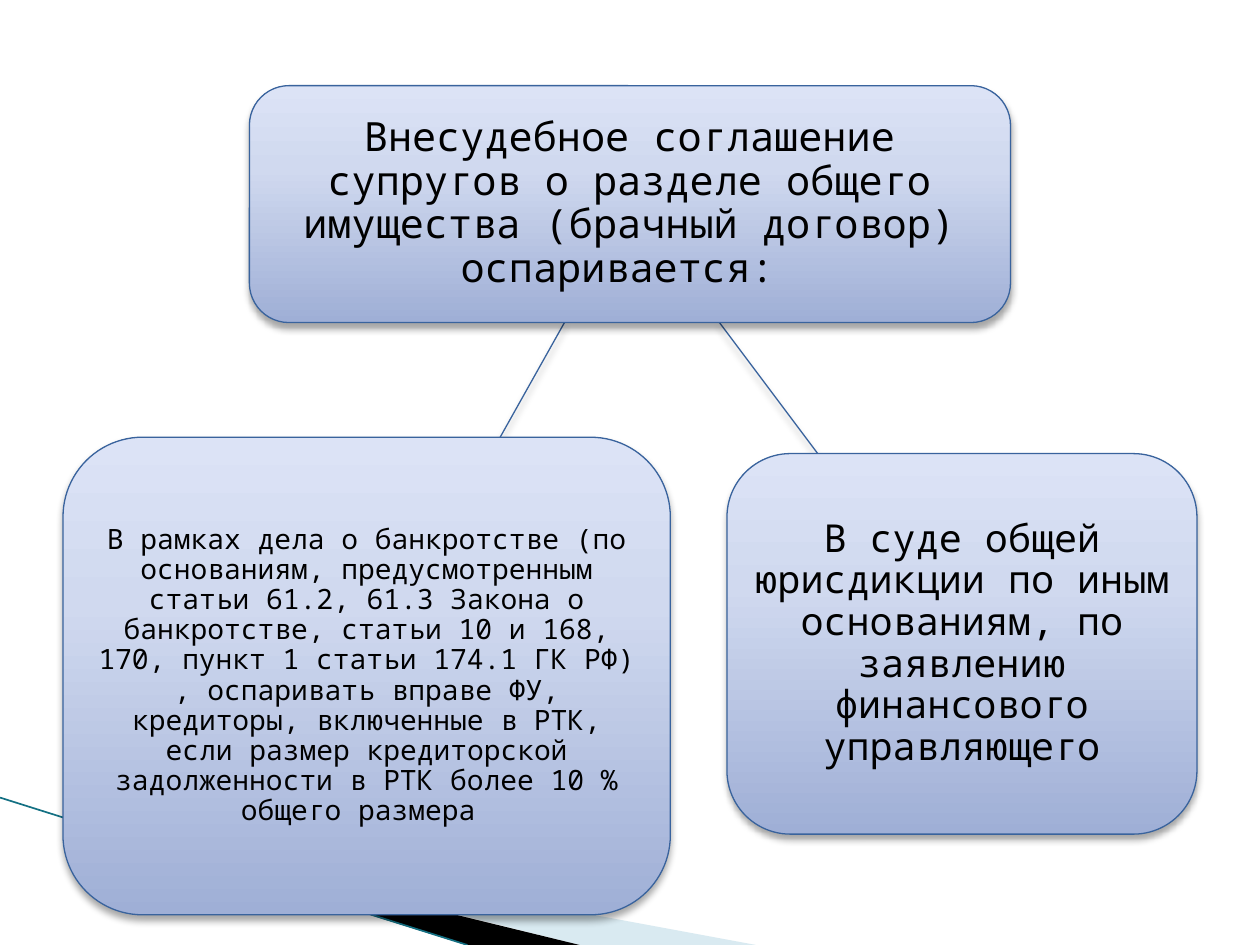
from copy import deepcopy
from dataclasses import dataclass

from lxml.etree import SubElement
from pptx import Presentation
from pptx.dml.color import RGBColor
from pptx.enum.shapes import MSO_CONNECTOR, MSO_SHAPE
from pptx.enum.text import MSO_ANCHOR, PP_ALIGN
from pptx.oxml.ns import qn
from pptx.util import Inches, Pt

CELL = 0.1
GRADIENT = ((0, "9FAFD6"), (0.65, "D0D9EF"), (1, "DCE3F6"))
OUTLINE = "39639D"
BLACK = "000000"


@dataclass
class Box:
    column: float
    row: float
    columns: float
    rows: float
    inset: float
    size: int
    text: str


@dataclass
class Link:
    start: tuple[float, float]
    end: tuple[float, float]
    color: str = OUTLINE
    width: float = 0.75
    shadow: bool = True


@dataclass
class Wedge:
    points: list[tuple[float, float]]
    color: str
    opacity: int


WEDGES = [
    Wedge([(5.5, 65), (59.5, 75), (45.6, 75)], "A0CBDC", 40),
    Wedge([(5.3, 64.9), (45.7, 75), (37.2, 75)], BLACK, 100),
]
EDGE = Link((0, 63.3), (37.1, 75), "137083", 0.95, False)
LINKS = [Link((44.8, 25.6), (39.7, 34.7)), Link((57.1, 25.6), (64.9, 36))]
BOXES = [
    Box(19.8, 6.8, 60.4, 18.8, 0.6, 23,
        "Внесудебное соглашение супругов о разделе общего имущества "
        "(брачный договор) оспаривается: "),
    Box(5, 34.7, 48.2, 37.9, 0.4, 16,
        "В рамках дела о банкротстве (по основаниям, предусмотренным статьи "
        "61.2, 61.3 Закона о банкротстве, статьи 10 и 168, 170, пункт 1 статьи "
        "174.1 ГК РФ) , оспаривать вправе ФУ, кредиторы, включенные в РТК, если "
        "размер кредиторской задолженности в РТК более 10 % общего размера "),
    Box(57.7, 36, 37.3, 30.2, 0.6, 22,
        "В суде общей юрисдикции по иным основаниям, по заявлению "
        "финансового управляющего"),
]


def cells(count: float) -> int:
    return Inches(count * CELL)


def color(value: str) -> RGBColor:
    return RGBColor.from_string(value)


def set_attributes(target, values: dict) -> None:
    for name, value in values.items():
        setattr(target, name, value)


def set_line(line, value: str, width: float) -> None:
    line.color.rgb = color(value)
    line.width = Pt(width)


def add_shadow(effects) -> None:
    shadow = SubElement(effects, qn("a:outerShdw"), blurRad=str(Pt(4)),
                        dist=str(Pt(3)), dir="5400000", rotWithShape="0")
    black = SubElement(shadow, qn("a:srgbClr"), val=BLACK)
    SubElement(black, qn("a:alpha"), val="35000")


def draw_wedge(slide, wedge: Wedge) -> None:
    first, *rest = wedge.points
    builder = slide.shapes.build_freeform(*first, scale=cells(1))
    builder.add_line_segments(rest)
    shape = builder.convert_to_shape()
    shape.shadow.inherit = False
    shape.line.fill.background()
    shape.fill.solid()
    shape.fill.fore_color.rgb = color(wedge.color)
    if wedge.opacity < 100:
        fill_color = next(shape.element.spPr.iter(qn("a:srgbClr")))
        SubElement(fill_color, qn("a:alpha"), val=str(wedge.opacity * 1000))


def draw_link(slide, link: Link) -> None:
    ends = [cells(value) for value in (*link.start, *link.end)]
    connector = slide.shapes.add_connector(MSO_CONNECTOR.STRAIGHT, *ends)
    set_line(connector.line, link.color, link.width)
    effects = SubElement(connector.element.spPr, qn("a:effectLst"))
    if link.shadow:
        add_shadow(effects)


def draw_box(slide, box: Box) -> None:
    place = [cells(value) for value in (box.column, box.row, box.columns, box.rows)]
    shape = slide.shapes.add_shape(MSO_SHAPE.ROUNDED_RECTANGLE, *place)
    properties = shape.element.spPr
    shape.fill.gradient()
    shape.fill.gradient_angle = 90
    stops = next(properties.iter(qn("a:gsLst")))
    stops.append(deepcopy(stops[-1]))
    for stop, (position, value) in zip(shape.fill.gradient_stops, GRADIENT):
        stop.position = position
        stop.color.rgb = color(value)
    set_line(shape.line, OUTLINE, 0.75)
    shape.shadow.inherit = False
    add_shadow(properties.find(qn("a:effectLst")))

    frame = shape.text_frame
    sides = ("left", "top", "right", "bottom")
    margins = {f"margin_{side}": cells(box.inset) for side in sides}
    set_attributes(frame, {"word_wrap": True, "vertical_anchor": MSO_ANCHOR.MIDDLE, **margins})
    paragraph = frame.paragraphs[0]
    set_attributes(paragraph, {"alignment": PP_ALIGN.CENTER, "line_spacing": 0.9})
    run = paragraph.add_run()
    run.text = box.text
    set_attributes(run.font, {"name": "Noto Sans Mono", "size": Pt(box.size)})
    run.font.color.rgb = color(BLACK)


def main() -> None:
    presentation = Presentation()
    set_attributes(presentation, {"slide_width": Inches(10), "slide_height": Inches(7.5)})
    slide = presentation.slides.add_slide(presentation.slide_layouts[6])
    for wedge in WEDGES:
        draw_wedge(slide, wedge)
    for link in (EDGE, *LINKS):
        draw_link(slide, link)
    for box in BOXES:
        draw_box(slide, box)
    presentation.save("out.pptx")


if __name__ == "__main__":
    main()
